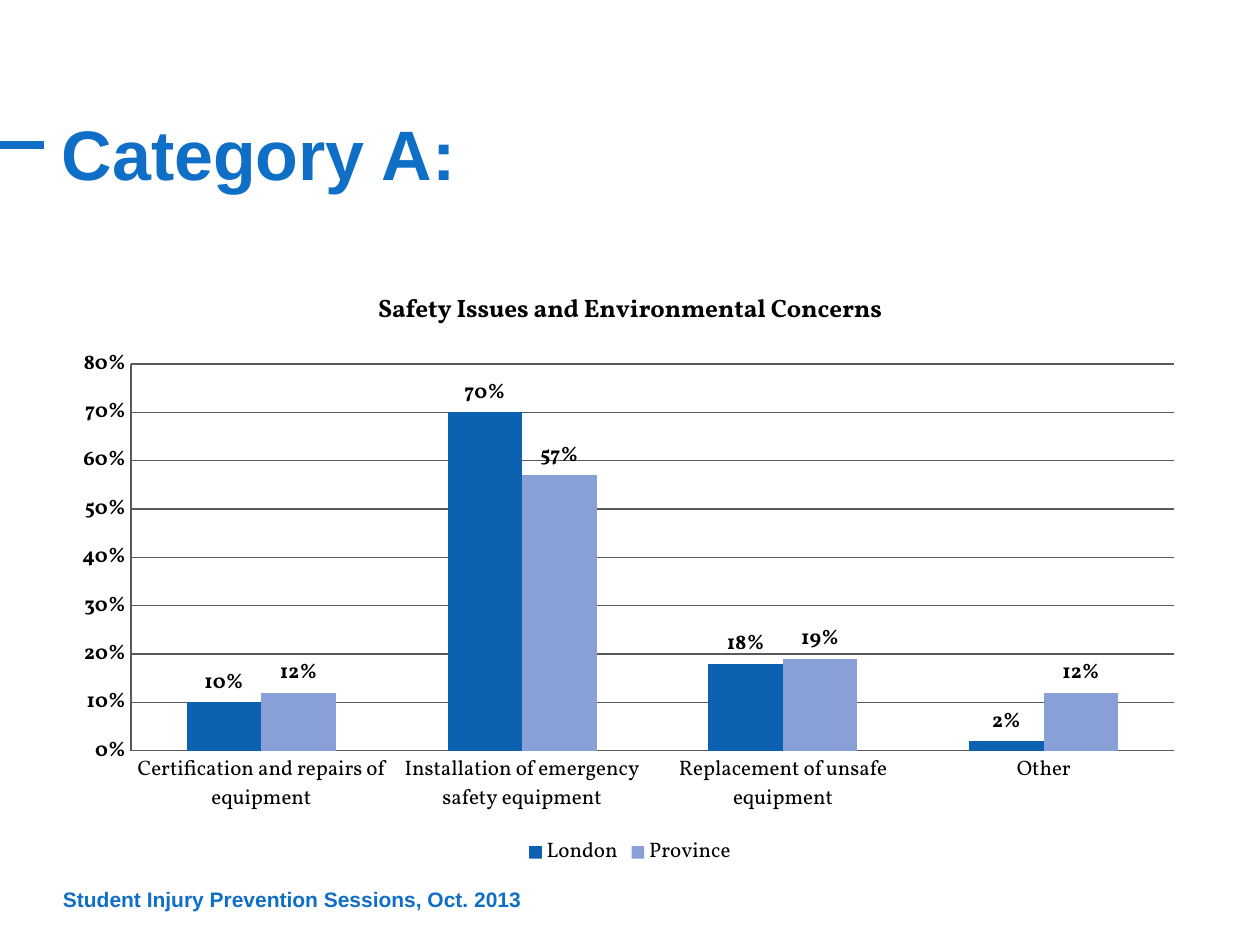
from lxml import etree
from pptx import Presentation
from pptx import util as u
from pptx.chart.data import CategoryChartData
from pptx.dml.color import RGBColor
from pptx.enum import chart as charts, shapes, text
from pptx.oxml.ns import qn

Inches, Pt = u.Inches, u.Pt


def color(hex_string):
    return RGBColor.from_string(hex_string)


class SlideBuilder:
    HEADING_FONT = "Arial"
    CHART_FONT = "Vollkorn"
    ACCENT = "0F6FC6"
    BLACK = "000000"
    GRID = "595959"

    def __init__(self, slide):
        self.slide = slide

    def style_font(self, font, name, size, hex_string, bold=False):
        font.name = name
        font.size = Pt(size)
        font.bold = bold
        font.color.rgb = color(hex_string)

    def set_heading(self, shape, words, size, top_inset=0):
        """Put one bold accent-coloured line at the bottom of the shape."""
        frame = shape.text_frame
        frame.word_wrap = True
        frame.auto_size = text.MSO_AUTO_SIZE.NONE
        frame.vertical_anchor = text.MSO_ANCHOR.BOTTOM
        frame.margin_left = frame.margin_right = frame.margin_bottom = 0
        frame.margin_top = Inches(top_inset)
        paragraph = frame.paragraphs[0]
        paragraph.alignment = text.PP_ALIGN.LEFT
        run = paragraph.add_run()
        run.text = words
        self.style_font(run.font, self.HEADING_FONT, size, self.ACCENT, True)

    def title(self, words, left, top, width, height):
        shape = self.slide.shapes.title
        shape.left, shape.top = Inches(left), Inches(top)
        shape.width, shape.height = Inches(width), Inches(height)
        self.set_heading(shape, words, 40, 0.05)

    def label(self, words, left, top, width, height):
        box = self.slide.shapes.add_textbox(
            Inches(left), Inches(top), Inches(width), Inches(height))
        self.set_heading(box, words, 12)

    def line(self, x1, y1, x2, y2, width):
        connector = self.slide.shapes.add_connector(
            shapes.MSO_CONNECTOR.STRAIGHT,
            Inches(x1), Inches(y1), Inches(x2), Inches(y2))
        connector.line.color.rgb = color(self.ACCENT)
        connector.line.width = Pt(width)
        etree.SubElement(connector._element.spPr, qn("a:effectLst"))

    def column_chart(self, heading, categories, series, left, top, width, height):
        """Add clustered columns; series maps a name to (values, colour)."""
        data = CategoryChartData(number_format="0%")
        data.categories = categories
        for name, (values, _) in series.items():
            data.add_series(name, values)
        chart = self.slide.shapes.add_chart(
            charts.XL_CHART_TYPE.COLUMN_CLUSTERED,
            Inches(left), Inches(top), Inches(width), Inches(height), data).chart
        self.style_font(chart.font, self.CHART_FONT, 12, self.BLACK)

        chart.has_title = True
        run = chart.chart_title.text_frame.paragraphs[0].add_run()
        run.text = heading
        self.style_font(run.font, self.CHART_FONT, 14.4, self.BLACK, True)

        chart.has_legend = True
        chart.legend.position = charts.XL_LEGEND_POSITION.BOTTOM
        chart.legend.include_in_layout = False

        self.format_axes(chart)
        self.format_columns(chart.plots[0], series)
        self.place_plot(chart, x=0.06, y=0.16, w=0.92, h=0.64)

    def format_axes(self, chart):
        for axis in (chart.category_axis, chart.value_axis):
            axis.major_tick_mark = axis.minor_tick_mark = charts.XL_TICK_MARK.NONE
            axis.format.line.color.rgb = color(self.GRID)
            axis.format.line.width = Pt(0.75)
        value_axis = chart.value_axis
        value_axis.minimum_scale, value_axis.maximum_scale = 0, 0.8
        value_axis.major_unit = 0.1
        value_axis.has_major_gridlines = True
        grid_line = value_axis.major_gridlines.format.line
        grid_line.color.rgb = color(self.GRID)
        grid_line.width = Pt(0.75)
        labels = value_axis.tick_labels
        labels.number_format, labels.number_format_is_linked = "0%", False
        self.style_font(labels.font, self.CHART_FONT, 12, self.BLACK, True)

    def format_columns(self, plot, series):
        plot.gap_width, plot.overlap = 150, 0
        plot.vary_by_categories = False
        for columns in plot.series:
            columns.format.fill.solid()
            columns.format.fill.fore_color.rgb = color(series[columns.name][1])
            labels = columns.data_labels
            labels.show_value = True
            labels.number_format, labels.number_format_is_linked = "0%", False
            labels.position = charts.XL_LABEL_POSITION.OUTSIDE_END
            self.style_font(labels.font, self.CHART_FONT, 12, self.BLACK, True)

    def place_plot(self, chart, **fractions):
        """Fix the inner plot area as fractions of the chart."""
        plot_area = chart._chartSpace.chart.plotArea
        for layout in plot_area.findall(qn("c:layout")):
            plot_area.remove(layout)
        layout = etree.Element(qn("c:layout"))
        manual = etree.SubElement(layout, qn("c:manualLayout"))
        settings = {"layoutTarget": "inner", "xMode": "edge", "yMode": "edge"}
        for tag, value in {**settings, **fractions}.items():
            etree.SubElement(manual, qn("c:" + tag)).set("val", str(value))
        plot_area.insert(0, layout)


def main():
    presentation = Presentation()
    presentation.slide_width, presentation.slide_height = Inches(10), Inches(7.5)
    title_only = presentation.slide_layouts[5]
    builder = SlideBuilder(presentation.slides.add_slide(title_only))

    builder.line(0, 1.15, 0.35, 1.15, 4.75)
    builder.title("Category A:", 0.49, 0.29, 9, 1.25)
    builder.label("Student Injury Prevention Sessions, Oct. 2013", 0.5, 6.98, 4.1, 0.26)
    builder.column_chart(
        "Safety Issues and Environmental Concerns",
        ["Certification and repairs of equipment",
         "Installation of emergency safety equipment",
         "Replacement of unsafe equipment",
         "Other"],
        {"London": ([0.1, 0.7, 0.18, 0.02], "0C62B0"),
         "Province": ([0.12, 0.57, 0.19, 0.12], "889FD7")},
        0.5, 2.12, 9, 4.8)
    presentation.save("out.pptx")


if __name__ == "__main__":
    main()
